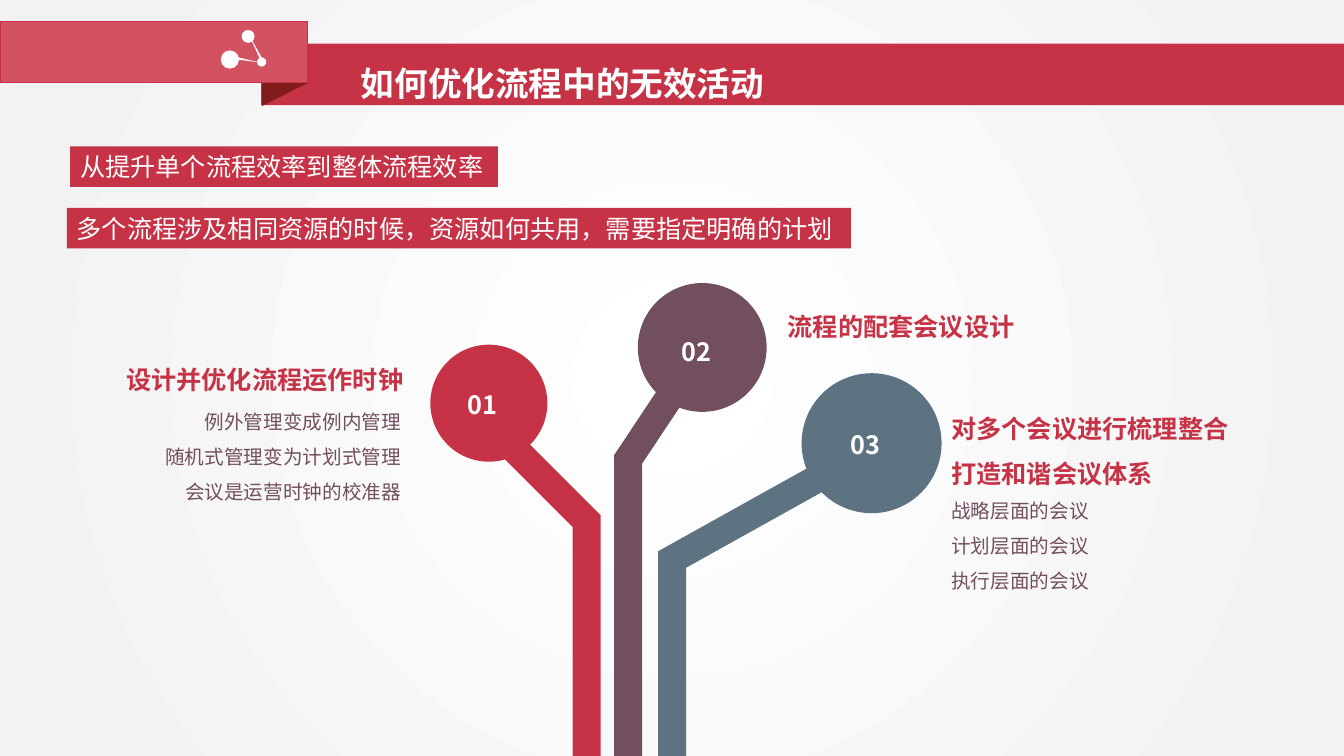
from lxml.etree import SubElement
from pptx import Presentation
from pptx.dml.color import RGBColor
from pptx.enum.shapes import MSO_SHAPE as Shape
from pptx.enum.text import MSO_ANCHOR as Anchor, MSO_AUTO_SIZE as AutoSize, PP_ALIGN as Align
from pptx.oxml.ns import qn
from pptx.util import Pt

WIDTH, HEIGHT = 960, 540
FONT = "Noto Sans CJK SC"
RED, PINK, DARK_RED = "C73346", "D25261", "821C1C"
PLUM, SLATE, WHITE, GREY = "724F5F", "5D7381", "FFFFFF", "F2F2F2"


def color(value):
    return RGBColor.from_string(value)


def write(frame, lines, size=18, ink=RED, bold=False, align=Align.LEFT,
          spacing=1.5, anchor=Anchor.TOP, wrap=True):
    frame.auto_size = AutoSize.NONE
    frame.word_wrap = wrap
    frame.vertical_anchor = anchor
    for number, line in enumerate(lines):
        para = frame.add_paragraph() if number else frame.paragraphs[0]
        para.alignment, para.line_spacing = align, spacing
        span = para.add_run()
        span.text = line
        span.font.size, span.font.bold, span.font.name = Pt(size), bold, FONT
        span.font.color.rgb = color(ink)
        SubElement(span.font._element, qn("a:ea"), typeface=FONT)


def add_text(page, box, lines, **style):
    write(page.shapes.add_textbox(*map(Pt, box)).text_frame, lines, **style)


def add_block(page, kind, box, fill, line=None, turn=0):
    block = page.shapes.add_shape(kind, *map(Pt, box))
    block.shadow.inherit = False
    block.rotation = turn
    block.fill.solid()
    block.fill.fore_color.rgb = color(fill)
    if line:
        block.line.color.rgb = color(line)
        block.line.width = Pt(1)
    else:
        block.line.fill.background()
    return block


def paint_background(page):
    fill = page.background.fill
    fill.gradient()
    for stop, (position, shade) in zip(fill.gradient_stops, [(0, WHITE), (0.91, GREY)]):
        stop.position, stop.color.rgb = position, color(shade)
    gradient = page.element.find(".//" + qn("a:gradFill"))
    gradient.remove(gradient.find(qn("a:lin")))
    circle = SubElement(gradient, qn("a:path"), path="circle")
    SubElement(circle, qn("a:fillToRect"), l="50000", t="50000", r="50000", b="50000")


def add_header(page, box, title_text):
    left, top, width, height = box
    tab_width, band_height, fold = 219.6, 44, 16.4
    # Band, raised tab and its folded corner
    add_block(page, Shape.RECTANGLE, (left + 186.5, top + 16, width - 186.5, band_height), RED)
    add_block(page, Shape.RECTANGLE, (left, top, tab_width, band_height), PINK, line=RED)
    add_block(page, Shape.RIGHT_TRIANGLE,
              (left + 195.2, top + 36, fold, 32.6), DARK_RED, turn=90)
    # Three linked dots
    for x, y, size in [(157.7, 20.8, 13), (183.6, 25.8, 6.6), (172.6, 6.2, 9.2)]:
        add_block(page, Shape.OVAL, (left + x, top + y, size, size), WHITE)
    for x, y, w, h, turn in [(173.5, 16.7, 2.2, 21.4, 100.7), (181.3, 8, 1.6, 20, 333.3)]:
        add_block(page, Shape.ISOSCELES_TRIANGLE, (left + x, top + y, w, h), WHITE, turn=turn)
    # Title, brought in front of the band
    title = page.shapes.title
    title.left, title.top = Pt(left + 250.6), Pt(top + 11.6)
    title.width, title.height = Pt(355.7), Pt(height)
    write(title.text_frame, [title_text], size=24, ink=WHITE, bold=True)
    title.element.getparent().append(title.element)


def add_banner(page, box, line):
    banner = add_block(page, Shape.RECTANGLE, box, RED)
    write(banner.text_frame, [line], ink=WHITE, spacing=1, anchor=Anchor.MIDDLE, wrap=False)


def add_branch(page, box, label, fill, stem, label_drop):
    left, top, size = box
    add_block(page, Shape.OVAL, (left, top, size, size), fill)
    # Stem: from the circle to the bend, then down to the slide edge
    start, bend = stem
    builder = page.shapes.build_freeform(*map(Pt, start))
    builder.add_line_segments(
        [tuple(map(Pt, bend)), (Pt(bend[0]), Pt(HEIGHT))], close=False)
    line = builder.convert_to_shape()
    line.shadow.inherit = False
    line.fill.background()
    line.line.color.rgb = color(fill)
    line.line.width = Pt(20)
    SubElement(line.line._get_or_add_ln(), qn("a:miter"), lim="800000")
    # Number
    add_text(page, (left + size / 2 - 22, top + label_drop, 44, 40),
             [label], ink=WHITE, bold=True)


def add_topic(page, box, heading, details=(), detail_box=None,
              align=Align.LEFT, detail_align=Align.LEFT):
    add_text(page, box, heading, bold=True, align=align)
    if details:
        add_text(page, detail_box, details, size=14, ink=PLUM, align=detail_align)


def build_slide(deck):
    page = deck.slides.add_slide(deck.slide_layouts[5])
    paint_background(page)
    add_header(page, (0, 15.2, WIDTH, 51), "如何优化流程中的无效活动")
    add_banner(page, (50.2, 104.6, 305.4, 29), "从提升单个流程效率到整体流程效率")
    add_banner(page, (47.8, 148.4, 560, 29),
               "多个流程涉及相同资源的时候，资源如何共用，需要指定明确的计划")
    # Numbered branches
    for branch in [
        ((307.4, 246.2, 83.6), "01", RED, ((343.4, 296.6), (419, 372.2)), 17.3),
        ((455.6, 202.2, 92), "02", PLUM, ((496, 257), (448.6, 328.3)), 23.8),
        ((572.6, 266.6, 100), "03", SLATE, ((605.5, 329.8), (480.2, 399.6)), 25.7),
    ]:
        add_branch(page, *branch)
    # Topic beside each branch
    add_topic(page, (77.8, 246.2, 222.5, 40), ["设计并优化流程运作时钟"],
              ["例外管理变成例内管理", "随机式管理变为计划式管理", "会议是运营时钟的校准器"],
              (66.2, 280.8, 227.5, 83.5), align=Align.CENTER, detail_align=Align.RIGHT)
    add_topic(page, (546.5, 208, 194.4, 40), ["流程的配套会议设计"], align=Align.CENTER)
    add_topic(page, (672.5, 280.8, 230.4, 72.7), ["对多个会议进行梳理整合", "打造和谐会议体系"],
              ["战略层面的会议", "计划层面的会议", "执行层面的会议"],
              (672.5, 344.2, 124.6, 83.5))


def main():
    deck = Presentation()
    deck.slide_width, deck.slide_height = Pt(WIDTH), Pt(HEIGHT)
    build_slide(deck)
    deck.save("out.pptx")


if __name__ == "__main__":
    main()
